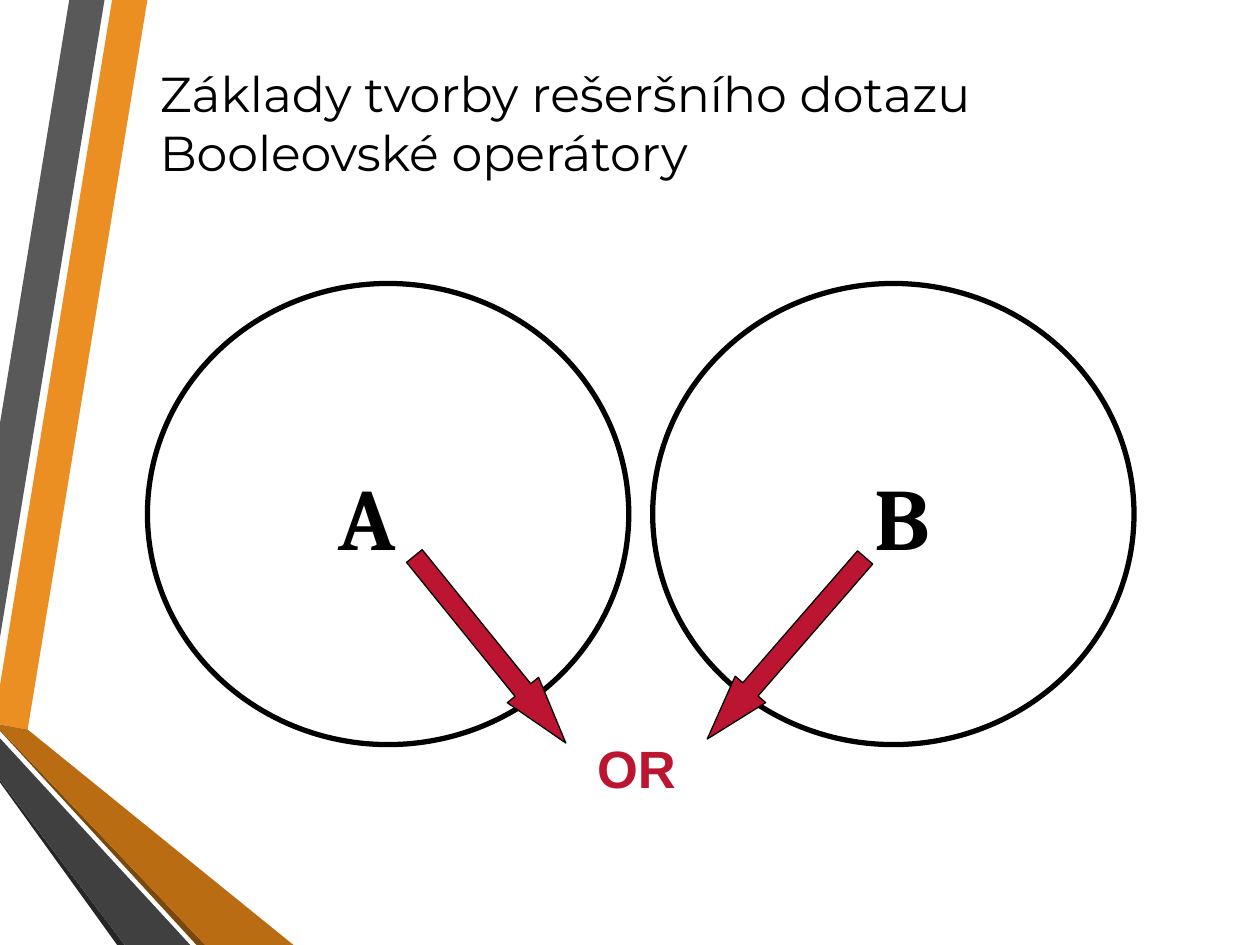
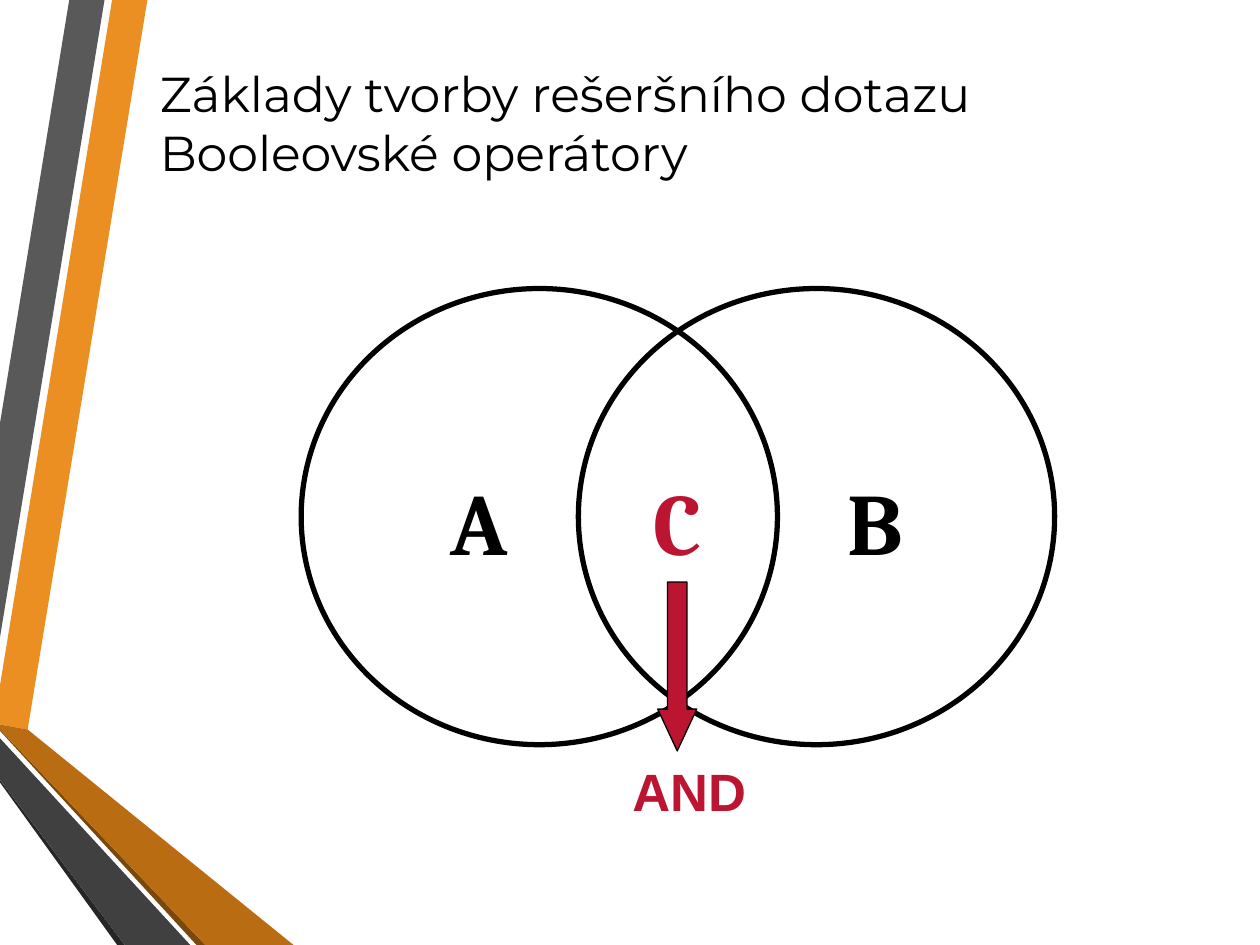
"""Build two slides that explain the Boolean operators OR and AND."""

from dataclasses import dataclass

from pptx import Presentation
from pptx.dml.color import RGBColor
from pptx.enum.shapes import MSO_SHAPE
from pptx.enum.text import MSO_ANCHOR, PP_ALIGN
from pptx.shapes.autoshape import Shape
from pptx.slide import Slide
from pptx.util import Inches, Pt

BLACK = "000000"
CRIMSON = "BB1531"
TITLE = "Základy tvorby rešeršního dotazu\nBooleovské operátory"


@dataclass(frozen=True)
class Band:
    """A filled polygon of the side decoration, in inches."""

    color: str
    points: tuple[tuple[float, float], ...]


@dataclass(frozen=True)
class Box:
    """A position and a size in inches."""

    left: float
    top: float
    width: float
    height: float

    def lengths(self) -> tuple[Inches, Inches, Inches, Inches]:
        """Return the box as lengths."""
        return Inches(self.left), Inches(self.top), Inches(self.width), Inches(self.height)


@dataclass(frozen=True)
class Style:
    """The look of a text."""

    font: str
    size: int
    color: str = BLACK
    bold: bool = False
    align: PP_ALIGN = PP_ALIGN.LEFT
    indent: float = 0
    wrap: bool = True


@dataclass(frozen=True)
class Label:
    """A text with its box and style."""

    text: str
    box: Box
    style: Style


@dataclass(frozen=True)
class Arrow:
    """A block arrow with its head length and rotation."""

    box: Box
    head: float
    rotation: float = 0


@dataclass(frozen=True)
class Diagram:
    """The sets, arrows and labels of one slide."""

    circles: tuple[Box, ...]
    arrows: tuple[Arrow, ...]
    labels: tuple[Label, ...]


BANDS = (
    Band("EB8F22", ((0, 5.44), (0, 5.75), (0.22, 5.79), (1.17, 0), (0.89, 0))),
    Band("595959", ((0.83, 0), (0.55, 0), (0, 3.36), (0, 5.06))),
    Band("262626", ((0, 6.19), (0, 6.21), (0.93, 7.5), (0.99, 7.5))),
    Band("7B480B", ((0, 5.79), (0, 5.8), (1.56, 7.5), (1.63, 7.5))),
    Band("B96C11", ((0, 5.79), (1.63, 7.5), (2.33, 7.5), (0.22, 5.79), (0, 5.75))),
    Band("404040", ((0, 6.19), (0.99, 7.5), (1.51, 7.5), (0, 5.86))),
)

TITLE_LABEL = Label(TITLE, Box(1.17, 0.5, 8.43, 0.94), Style("Montserrat", 28))
SET_STYLE = Style("Cambria", 50, bold=True, align=PP_ALIGN.CENTER)
SHARED_STYLE = Style("Cambria", 50, CRIMSON, True, PP_ALIGN.CENTER)
OR_STYLE = Style("Arial", 30, CRIMSON, True, PP_ALIGN.JUSTIFY, 0.5)
AND_STYLE = Style("Arial", 30, CRIMSON, True, PP_ALIGN.CENTER, 0.5, False)

DIAGRAMS = (
    Diagram(
        circles=tuple(Box(left, 2.25, 3.82, 3.66) for left in (1.17, 5.18)),
        arrows=(
            Arrow(Box(3.73, 4.2, 0.32, 1.91), 1.69, 321),
            Arrow(Box(6.08, 4.19, 0.32, 1.91), 1.63, 41),
        ),
        labels=(
            Label("A", Box(2.43, 3.62, 0.96, 0.94), SET_STYLE),
            Label("B", Box(6.68, 3.62, 0.96, 0.94), SET_STYLE),
            Label("OR", Box(4.14, 5.79, 1.61, 0.61), OR_STYLE),
        ),
    ),
    Diagram(
        circles=tuple(Box(left, 2.29, 3.78, 3.62) for left in (2.39, 4.59)),
        arrows=(Arrow(Box(5.22, 4.62, 0.31, 1.34), 1.07),),
        labels=(
            Label("A", Box(3.33, 3.67, 0.94, 0.93), SET_STYLE),
            Label("B", Box(6.48, 3.67, 0.94, 0.93), SET_STYLE),
            Label("C", Box(4.91, 3.67, 0.94, 0.93), SHARED_STYLE),
            Label("AND", Box(4.41, 5.97, 1.62, 0.61), AND_STYLE),
        ),
    ),
)


def rgb(color: str) -> RGBColor:
    """Turn a hex string into a colour."""
    return RGBColor.from_string(color)


def paint(shape: Shape, fill: str | None, line_width: float = 0) -> None:
    """Set the fill and black outline of a shape without a shadow."""
    shape.shadow.inherit = False
    if fill:
        shape.fill.solid()
        shape.fill.fore_color.rgb = rgb(fill)
    else:
        shape.fill.background()
    if line_width:
        shape.line.color.rgb = rgb(BLACK)
        shape.line.width = Pt(line_width)
    else:
        shape.line.fill.background()


def add_band(slide: Slide, band: Band) -> None:
    """Draw one polygon of the side decoration."""
    start, *others = [(Inches(x), Inches(y)) for x, y in band.points]
    builder = slide.shapes.build_freeform(*start)
    builder.add_line_segments(others, close=True)
    paint(builder.convert_to_shape(), band.color)


def add_circle(slide: Slide, box: Box) -> None:
    """Draw the outline of a set."""
    paint(slide.shapes.add_shape(MSO_SHAPE.OVAL, *box.lengths()), None, 3)


def add_arrow(slide: Slide, arrow: Arrow) -> None:
    """Draw an arrow that leads to the operator."""
    shape = slide.shapes.add_shape(MSO_SHAPE.DOWN_ARROW, *arrow.box.lengths())
    shape.adjustments[0] = 0.5
    shape.adjustments[1] = arrow.head
    shape.rotation = arrow.rotation
    paint(shape, CRIMSON, 0.75)


def add_label(slide: Slide, label: Label) -> None:
    """Write a text in its style."""
    style = label.style
    text_frame = slide.shapes.add_textbox(*label.box.lengths()).text_frame
    text_frame.word_wrap = style.wrap
    text_frame.vertical_anchor = MSO_ANCHOR.MIDDLE
    paragraph = text_frame.paragraphs[0]
    paragraph.text = label.text
    paragraph.alignment = style.align
    paragraph.font.name = style.font
    paragraph.font.size = Pt(style.size)
    paragraph.font.bold = style.bold
    paragraph.font.color.rgb = rgb(style.color)
    if style.indent:
        properties = paragraph._p.get_or_add_pPr()
        properties.set("marL", str(Inches(style.indent)))
        properties.set("indent", "0")


def add_diagram(slide: Slide, diagram: Diagram) -> None:
    """Draw the decoration, the title and the diagram of a slide."""
    for band in BANDS:
        add_band(slide, band)
    add_label(slide, TITLE_LABEL)
    for circle in diagram.circles:
        add_circle(slide, circle)
    for arrow in diagram.arrows:
        add_arrow(slide, arrow)
    for label in diagram.labels:
        add_label(slide, label)


def main() -> None:
    """Build and save the presentation."""
    presentation = Presentation()
    presentation.slide_width = Inches(10)
    presentation.slide_height = Inches(7.5)
    for diagram in DIAGRAMS:
        add_diagram(presentation.slides.add_slide(presentation.slide_layouts[6]), diagram)
    presentation.save("out.pptx")


if __name__ == "__main__":
    main()
